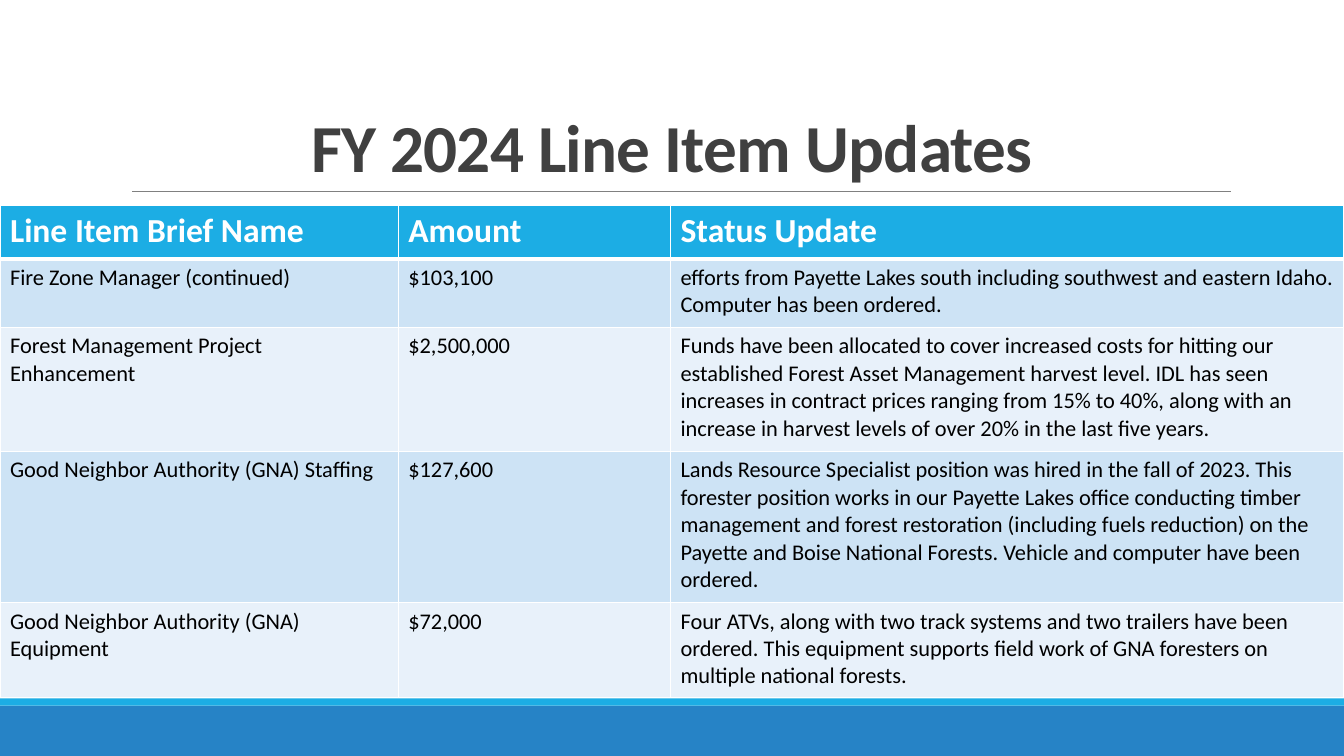
from dataclasses import dataclass

from lxml.etree import SubElement
from pptx import Presentation
from pptx.dml.color import RGBColor
from pptx.enum.shapes import MSO_CONNECTOR, MSO_SHAPE
from pptx.enum.text import MSO_ANCHOR, PP_ALIGN
from pptx.oxml import parse_xml
from pptx.oxml.ns import nsdecls, qn
from pptx.util import Inches, Pt


@dataclass(frozen=True)
class Theme:
    font: str = "Calibri"
    title_size: int = 48
    header_size: int = 24
    body_size: int = 16
    title: str = "404040"
    body: str = "000000"
    white: str = "FFFFFF"
    rule: str = "808080"
    accent: str = "1CADE4"
    footer: str = "2683C6"
    bands: tuple = ("CDE3F5", "E8F1FA")


@dataclass(frozen=True)
class Box:
    left: float
    top: float
    width: float
    height: float

    def emu(self):
        return [Inches(n) for n in (self.left, self.top, self.width, self.height)]


THEME = Theme()
WIDTH, HEIGHT = 13.33, 7.5
TITLE_BOX = Box(0, 0.31, WIDTH, 1.59)
TABLE_BOX = Box(0, 2.04, WIDTH, 4.88)
FOOTER_BOX = Box(0, 6.93, WIDTH, 0.57)

COLUMN_WIDTHS = (3.95, 2.7, 6.68)
ROW_HEIGHTS = (0.53, 0.68, 1.23, 1.5, 0.94)
LINE_ITEMS = (
    ("Line Item Brief Name", "Amount", "Status Update"),
    ("Fire Zone Manager (continued)", "$103,100",
     "efforts from Payette Lakes south including southwest and eastern Idaho. "
     "Computer has been ordered."),
    ("Forest Management Project Enhancement", "$2,500,000",
     "Funds have been allocated to cover increased costs for hitting our established "
     "Forest Asset Management harvest level. IDL has seen increases in contract prices "
     "ranging from 15% to 40%, along with an increase in harvest levels of over 20% "
     "in the last five years."),
    ("Good Neighbor Authority (GNA) Staffing", "$127,600",
     "Lands Resource Specialist position was hired in the fall of 2023. This forester "
     "position works in our Payette Lakes office conducting timber management and forest "
     "restoration (including fuels reduction) on the Payette and Boise National Forests. "
     "Vehicle and computer have been ordered."),
    ("Good Neighbor Authority (GNA) Equipment", "$72,000",
     "Four ATVs, along with two track systems and two trailers have been ordered. This "
     "equipment supports field work of GNA foresters on multiple national forests."),
)


def write_text(frame, text, size, color, bold=False, align=PP_ALIGN.LEFT,
               line_spacing=None, tracking=None):
    frame.word_wrap = True
    paragraph = frame.paragraphs[0]
    paragraph.alignment = align
    paragraph.line_spacing = line_spacing
    run = paragraph.add_run()
    run.text = text
    run.font.name = THEME.font
    run.font.size = Pt(size)
    run.font.bold = bold
    run.font.color.rgb = RGBColor.from_string(color)
    if tracking is not None:
        run.font._element.set("spc", str(round(tracking * 100)))


def add_bar(slide, box, color):
    bar = slide.shapes.add_shape(MSO_SHAPE.RECTANGLE, *box.emu())
    bar.shadow.inherit = False
    bar.fill.solid()
    bar.fill.fore_color.rgb = RGBColor.from_string(color)
    bar.line.fill.background()


def add_footer(slide, box):
    stripe = 0.07
    add_bar(slide, Box(box.left, box.top + stripe, box.width, box.height - stripe),
            THEME.footer)
    add_bar(slide, Box(box.left, box.top, box.width, stripe), THEME.accent)


def add_title(slide, box, text):
    # Rule along the bottom edge
    bottom = Inches(box.top + box.height)
    rule = slide.shapes.add_connector(
        MSO_CONNECTOR.STRAIGHT, Inches(box.left + 1.31), bottom,
        Inches(box.left + box.width - 1.12), bottom)
    rule.line.color.rgb = RGBColor.from_string(THEME.rule)
    rule.line.width = Pt(0.5)
    SubElement(rule._element.spPr, qn("a:effectLst"))
    # Heading
    heading = slide.shapes.add_textbox(*box.emu())
    heading.text_frame.vertical_anchor = MSO_ANCHOR.BOTTOM
    write_text(heading.text_frame, text, THEME.title_size, THEME.title, bold=True,
               align=PP_ALIGN.CENTER, line_spacing=0.85, tracking=-0.5)


def set_borders(cell, widths):
    properties = cell._tc.get_or_add_tcPr()
    for index, (side, width) in enumerate(widths.items()):
        properties.insert(index, parse_xml(
            f'<a:ln{side} {nsdecls("a")} w="{Pt(width)}"><a:solidFill>'
            f'<a:srgbClr val="{THEME.white}"/></a:solidFill></a:ln{side}>'))


def add_line_item_table(slide, box, rows):
    table = slide.shapes.add_table(len(rows), len(COLUMN_WIDTHS), *box.emu()).table
    for column, width in zip(table.columns, COLUMN_WIDTHS):
        column.width = Inches(width)
    for row, height in zip(table.rows, ROW_HEIGHTS):
        row.height = Inches(height)
    for r, texts in enumerate(rows):
        header = r == 0
        fill = THEME.accent if header else THEME.bands[(r - 1) % 2]
        size = THEME.header_size if header else THEME.body_size
        color = THEME.white if header else THEME.body
        borders = {"L": 1, "R": 1, "T": 3 if r == 1 else 1, "B": 3 if header else 1}
        for c, text in enumerate(texts):
            cell = table.cell(r, c)
            cell.fill.solid()
            cell.fill.fore_color.rgb = RGBColor.from_string(fill)
            set_borders(cell, borders)
            write_text(cell.text_frame, text, size, color, bold=header)


def main():
    presentation = Presentation()
    presentation.slide_width = Inches(WIDTH)
    presentation.slide_height = Inches(HEIGHT)
    slide = presentation.slides.add_slide(presentation.slide_layouts[6])
    add_footer(slide, FOOTER_BOX)
    add_title(slide, TITLE_BOX, "FY 2024 Line Item Updates")
    add_line_item_table(slide, TABLE_BOX, LINE_ITEMS)
    presentation.save("out.pptx")


if __name__ == "__main__":
    main()
